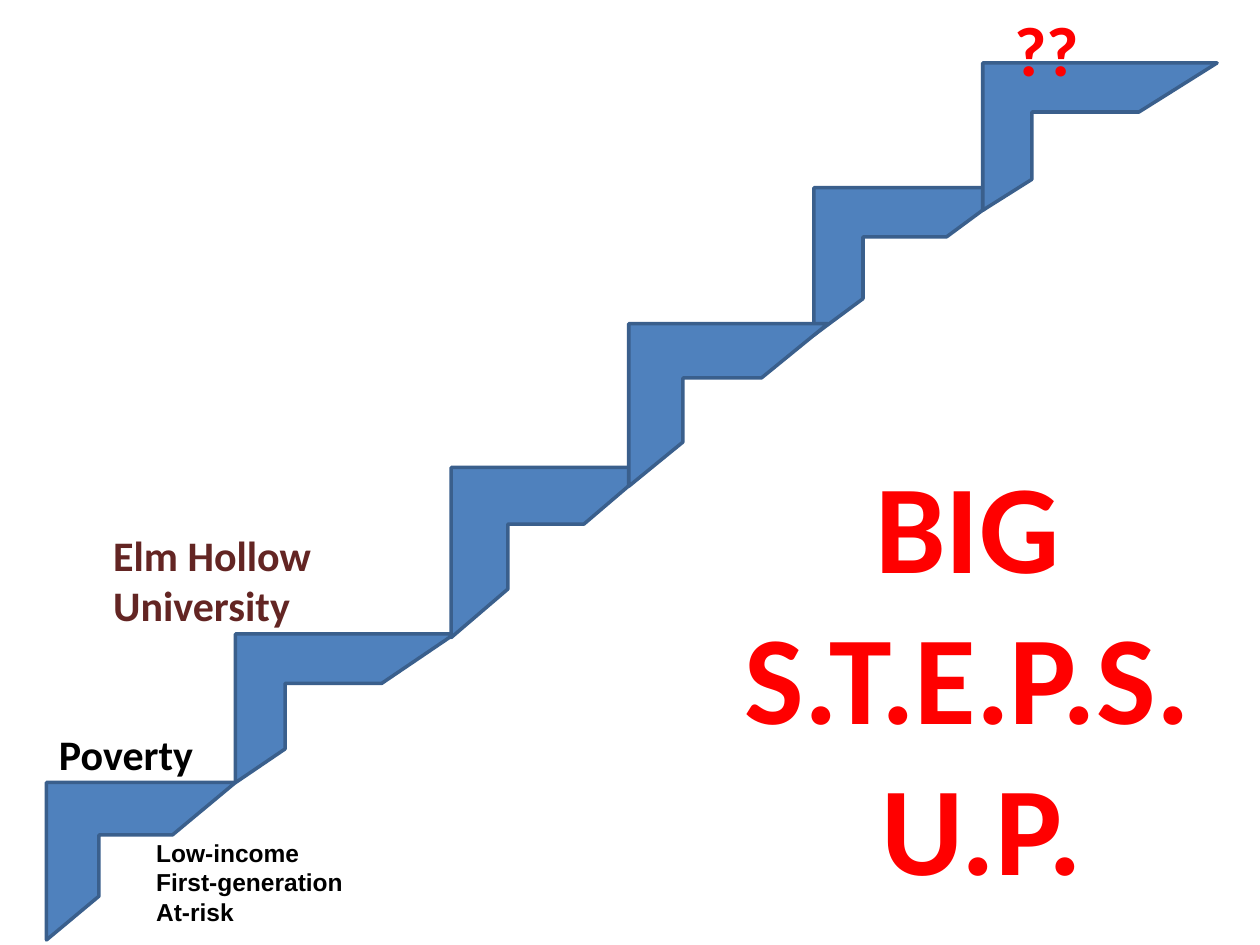
from dataclasses import dataclass

from pptx import Presentation
from pptx.dml.color import RGBColor
from pptx.enum.shapes import MSO_SHAPE as Shape
from pptx.enum.text import MSO_AUTO_SIZE as AutoSize, PP_ALIGN as Align
from pptx.util import Pt


@dataclass(frozen=True)
class Theme:
    """Colours, fonts and type sizes of the slide."""
    step: str = "4F81BD"
    edge: str = "3A5F8C"
    red: str = "FF0000"
    maroon: str = "632523"
    black: str = "000000"
    heading: str = "Calibri"
    body: str = "Arial"
    edge_width: float = 2
    title_size: int = 72
    mark_size: int = 40
    label_size: int = 24
    note_size: int = 14


def format_text(paragraph, text, *, font, size, color, align=Align.LEFT):
    """Write bold text into a paragraph."""
    paragraph.alignment = align
    run = paragraph.add_run()
    run.text = text
    run.font.name = font
    run.font.size = Pt(size)
    run.font.bold = True
    run.font.color.rgb = RGBColor.from_string(color)


class SlideBuilder:
    """Draws themed elements on the current slide."""

    def __init__(self, slide, theme):
        """Keep the slide and its theme."""
        self.slide = slide
        self.theme = theme

    def step(self, left, top, width, height):
        """Add one stair as a half frame."""
        shape = self.slide.shapes.add_shape(
            Shape.HALF_FRAME, *map(Pt, (left, top, width, height)))
        shape.shadow.inherit = False
        shape.fill.solid()
        shape.fill.fore_color.rgb = RGBColor.from_string(self.theme.step)
        shape.line.color.rgb = RGBColor.from_string(self.theme.edge)
        shape.line.width = Pt(self.theme.edge_width)

    def text(self, box, lines, wrap=False, **style):
        """Add a text box with one paragraph per line."""
        frame = self.slide.shapes.add_textbox(*map(Pt, box)).text_frame
        frame.word_wrap = wrap
        frame.auto_size = AutoSize.SHAPE_TO_FIT_TEXT
        for index, line in enumerate(lines):
            paragraph = frame.add_paragraph() if index else frame.paragraphs[0]
            format_text(paragraph, line, **style)


STEPS = [
    (26.6, 447.1, 108, 90),
    (465.1, 107.3, 113.8, 84.2),
    (134.6, 362.2, 125.3, 85),
    (257.8, 267.1, 113.8, 97.2),
    (359.3, 185, 113.8, 92.9),
    (561.6, 36, 133.9, 84.2),
]


def main():
    """Build the staircase slide and save it."""
    presentation = Presentation()
    presentation.slide_width, presentation.slide_height = Pt(720), Pt(540)
    slide = presentation.slides.add_slide(presentation.slide_layouts[6])
    theme = Theme()
    builder = SlideBuilder(slide, theme)

    for step in STEPS:
        builder.step(*step)

    builder.text((572.4, 0, 51.8, 55.4), ["??"],
                 font=theme.heading, size=theme.mark_size, color=theme.red)
    builder.text((414, 252, 293.8, 269.3), ["BIG ", "S.T.E.P.S. ", "U.P."],
                 wrap=True, font=theme.heading, size=theme.title_size,
                 color=theme.red, align=Align.CENTER)
    builder.text((26.6, 412.6, 92.2, 36), ["Poverty"],
                 font=theme.heading, size=theme.label_size, color=theme.black)
    builder.text((82.1, 475.2, 121.7, 58.3),
                 ["Low-income", "First-generation", "At-risk"],
                 font=theme.body, size=theme.note_size, color=theme.black)
    builder.text((57.6, 298.8, 152.6, 65.5), ["Elm Hollow University"],
                 wrap=True, font=theme.heading, size=theme.label_size,
                 color=theme.maroon)

    presentation.save("out.pptx")


if __name__ == "__main__":
    main()
